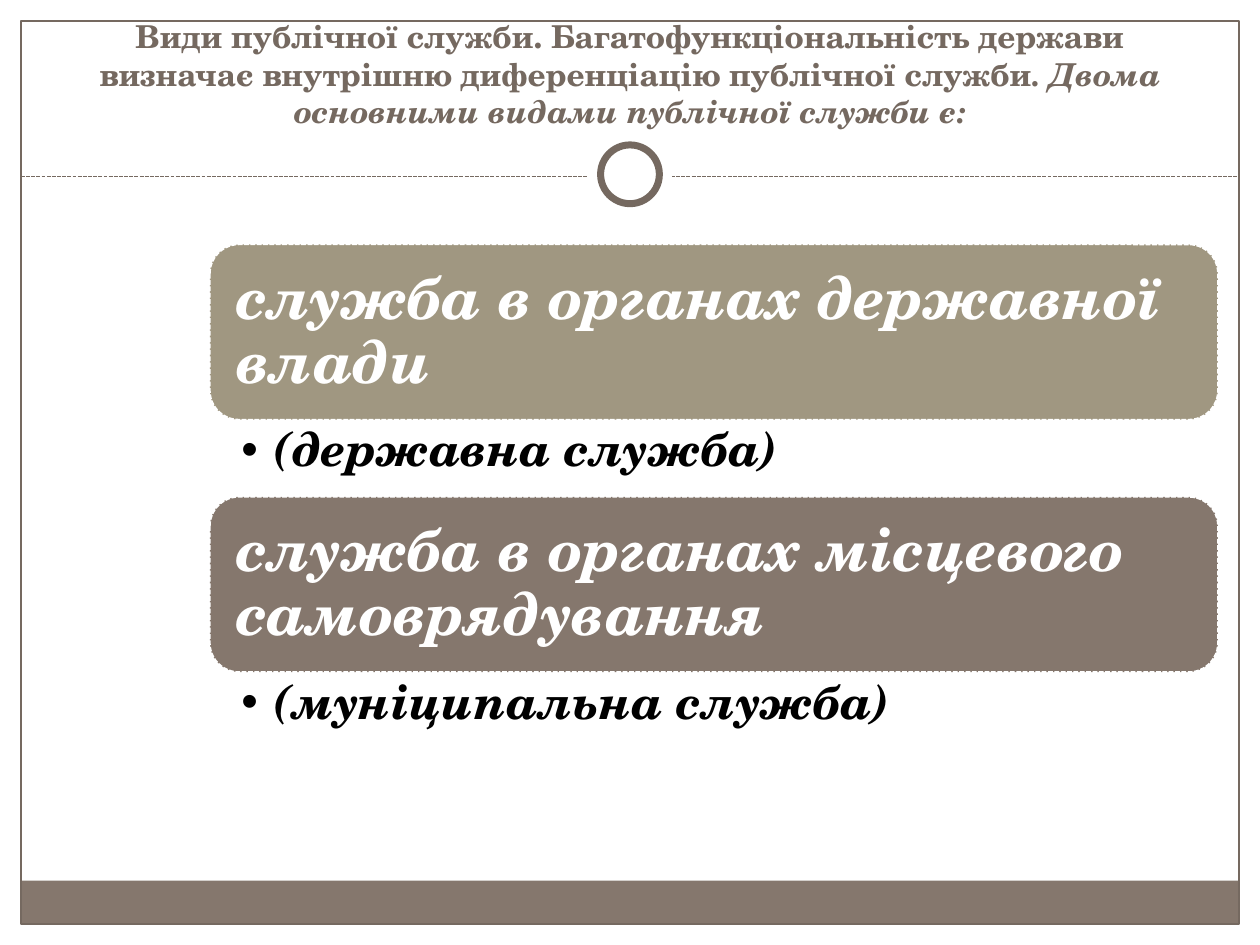
from dataclasses import dataclass
from typing import Any

from lxml.etree import SubElement
from pptx import Presentation
from pptx.dml.color import RGBColor as Rgb
from pptx.enum.dml import MSO_LINE as Dash
from pptx.enum.shapes import MSO_CONNECTOR as Conn, MSO_SHAPE as Kind
from pptx.enum.text import MSO_ANCHOR as Anchor, MSO_AUTO_SIZE as Fit, PP_ALIGN as Align
from pptx.oxml.ns import qn
from pptx.util import Inches, Pt

FONT = "TeX Gyre Schola"
HEX = {"white": "FFFFFF", "black": "000000", "dark": "756960",
       "brown": "85776D", "olive": "A09781"}
COLS, ROWS = 60, 45  # square grid cells over the slide
CELL = Inches(10) // COLS
PITCH, CARD_H, LIST_H = 12.02, 8.34, 3.7


@dataclass
class Box:
    """A place on the grid, in columns and rows."""
    col: float
    row: float
    wide: float
    high: float

    def place(self) -> list[int]:
        return [round(n * CELL) for n in (self.col, self.row, self.wide, self.high)]


@dataclass
class Card:
    head: str
    item: str
    fill: str


CARDS = [
    Card("служба в органах державної влади", "(державна служба)", "olive"),
    Card("служба в органах місцевого самоврядування", "(муніципальна служба)", "brown"),
]


def assign(obj: Any, vals: dict[str, Any]) -> None:
    for key, val in vals.items():
        setattr(obj, key, val)


def rgb(name: str) -> Rgb:
    return Rgb.from_string(HEX[name])


def stroke(line: Any, hue: str, width: float, dash: Any = None) -> None:
    line.color.rgb = rgb(hue)
    assign(line, {"width": Pt(width), "dash_style": dash})


def draw(slide: Any, kind: Any, box: Box, fill: str = "") -> Any:
    """Add a flat shape without a line."""
    shape = slide.shapes.add_shape(kind, *box.place())
    shape.shadow.inherit = False
    shape.line.fill.background()
    if fill:
        shape.fill.solid()
        shape.fill.fore_color.rgb = rgb(fill)
    else:
        shape.fill.background()
    return shape


def write(shape: Any, parts: list[tuple[str, bool]], size: float, hue: str,
          frame: dict[str, Any], para: dict[str, Any]) -> Any:
    """Fill one paragraph with (text, italic) runs and return it."""
    text = shape.text_frame
    assign(text, {"word_wrap": True, "auto_size": Fit.NONE} | frame)
    par = text.paragraphs[0]
    assign(par, {"space_before": Pt(0)} | para)
    for words, slant in parts:
        run = par.add_run()
        run.text = words
        assign(run.font, {"name": FONT, "size": Pt(size), "bold": True, "italic": slant})
        run.font.color.rgb = rgb(hue)
    return par


def move(holder: Any, box: Box) -> Any:
    assign(holder, dict(zip(("left", "top", "width", "height"), box.place())))
    return holder


def bullet(par: Any) -> None:
    props = par._p.get_or_add_pPr()
    indent = Inches(0.25)
    props.set("marL", str(indent))
    props.set("indent", str(-indent))
    SubElement(props, qn("a:buChar")).set("char", "•")


def decor(slide: Any) -> None:
    draw(slide, Kind.RECTANGLE, Box(1, 41.94, 58, 2.06), "brown")
    stroke(draw(slide, Kind.RECTANGLE, Box(1, 1, 58, 43)).line, "dark", 0.75)
    left, top, wide, _ = Box(1, 8.4, 58, 0).place()
    rule = slide.shapes.add_connector(Conn.STRAIGHT, left, top, left + wide, top)
    stroke(rule.line, "dark", 0.75, Dash.SQUARE_DOT)
    SubElement(rule._element.spPr, qn("a:effectLst"))
    draw(slide, Kind.OVAL, Box(28, 6.3, 4, 4), "white")
    ring = draw(slide, Kind.OVAL, Box(28.6, 6.9, 2.8, 2.8), "white")
    stroke(ring.line, "dark", 4)


def add_card(slide: Any, card: Card, holder: Any, row: float) -> None:
    """Draw a heading card with its list below."""
    shape = draw(slide, Kind.ROUNDED_RECTANGLE, Box(10, row, 48, CARD_H), card.fill)
    stroke(shape.line, "white", 0.9, Dash.SQUARE_DOT)
    pad = {f"margin_{side}": Inches(0.14) for side in ("left", "top", "right", "bottom")}
    write(shape, [(card.head, True)], 34, "white", pad | {"vertical_anchor": Anchor.MIDDLE},
          {"alignment": Align.LEFT, "line_spacing": 0.9})
    move(holder, Box(10, row + CARD_H, 48, LIST_H))
    par = write(holder, [(card.item, True)], 27, "black",
                {"margin_left": Inches(0.25), "margin_right": Inches(0.26),
                 "vertical_anchor": Anchor.TOP},
                {"alignment": Align.LEFT, "line_spacing": 0.9})
    bullet(par)


def main() -> None:
    deck = Presentation()
    assign(deck, {"slide_width": COLS * CELL, "slide_height": ROWS * CELL})
    slide = deck.slides.add_slide(deck.slide_layouts[3])
    title, *lists = slide.placeholders
    decor(slide)
    write(move(title, Box(2, 1.5, 56, 5)),
          [("Види публічної служби. Багатофункціональність держави визначає "
            "внутрішню диференціацію публічної служби", False),
           (". Двома основними видами публічної служби є:", True)],
          18, "dark", {"vertical_anchor": Anchor.BOTTOM}, {"alignment": Align.CENTER})
    for num, (card, holder) in enumerate(zip(CARDS, lists)):
        add_card(slide, card, holder, 11.64 + num * PITCH)
    deck.save("out.pptx")


if __name__ == "__main__":
    main()
